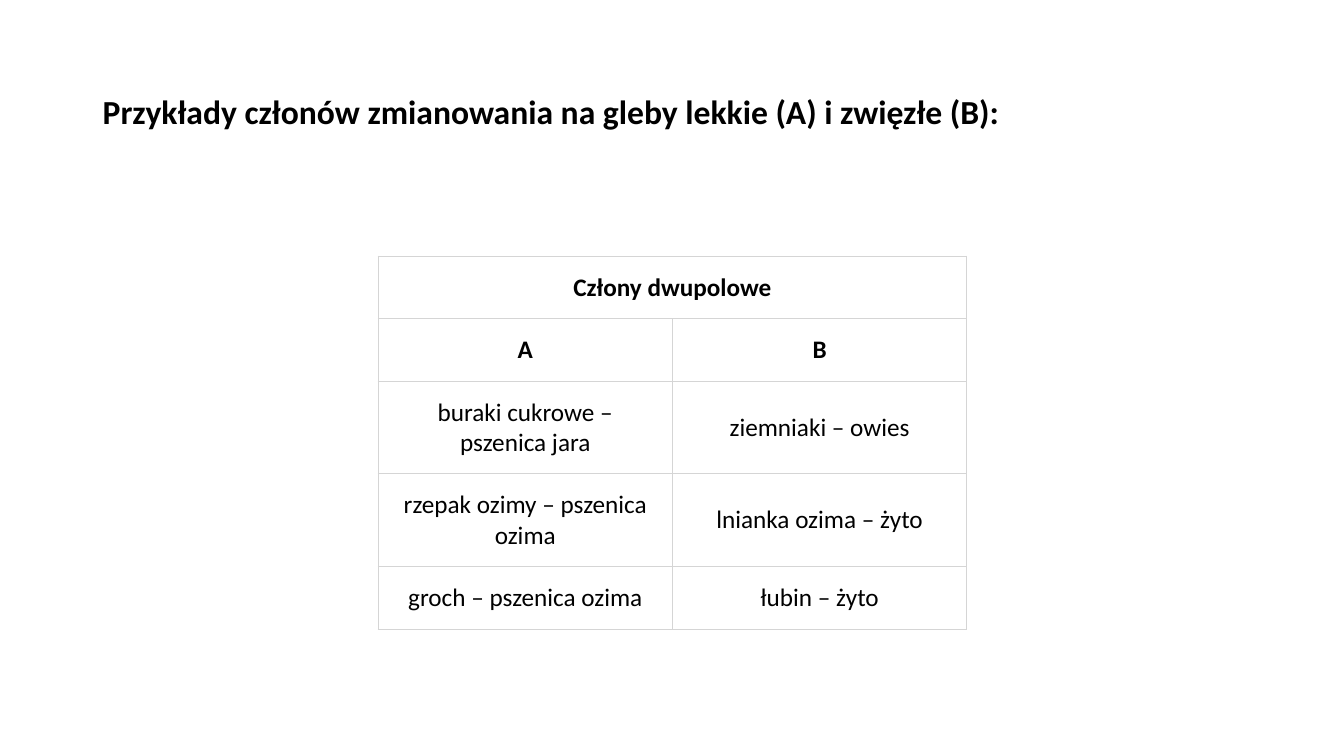
from dataclasses import dataclass

from lxml.etree import SubElement
from pptx import Presentation
from pptx.dml.color import RGBColor
from pptx.enum.text import MSO_ANCHOR, PP_ALIGN
from pptx.oxml.ns import qn
from pptx.slide import Slide
from pptx.table import _Cell
from pptx.text.text import _Paragraph
from pptx.util import Inches, Pt


@dataclass(frozen=True)
class Theme:
    font: str = "Calibri"
    ink: str = "000000"
    paper: str = "FFFFFF"
    rule: str = "D5D5D5"
    title: float = 24
    body: float = 18
    line: float = 0.75


@dataclass(frozen=True)
class Row:
    texts: tuple[str, ...]
    height: float = 0.61
    bold: bool = False


THEME = Theme()
TITLE = "Przykłady członów zmianowania na gleby lekkie (A) i zwięzłe (B):"
ROWS = (
    Row(("Człony dwupolowe",), bold=True),
    Row(("A", "B"), bold=True),
    Row(("buraki cukrowe – pszenica jara", "ziemniaki – owies"), 0.92),
    Row(("rzepak ozimy – pszenica ozima", "lnianka ozima – żyto"), 0.92),
    Row(("groch – pszenica ozima", "łubin – żyto")),
)
COLS = 2
WIDTH = 2.92
PAD = Inches(0.16)


def write(para: _Paragraph, text: str, size: float, bold: bool) -> None:
    para.text = text
    font = para.font
    font.name, font.size, font.bold = THEME.font, Pt(size), bold
    font.color.rgb = RGBColor.from_string(THEME.ink)


def frame(cell: _Cell) -> None:
    """Rule all four edges of a cell, then fill it."""
    props = cell._tc.get_or_add_tcPr()
    for side in "LRTB":
        edge = SubElement(props, qn(f"a:ln{side}"), w=str(Pt(THEME.line)))
        fill = SubElement(edge, qn("a:solidFill"))
        SubElement(fill, qn("a:srgbClr"), val=THEME.rule)
    cell.fill.solid()
    cell.fill.fore_color.rgb = RGBColor.from_string(THEME.paper)


def add_title(slide: Slide) -> None:
    box = slide.shapes.add_textbox(
        Inches(0.92), Inches(0.4), Inches(11.5), Inches(1.45)
    )
    text = box.text_frame
    text.word_wrap = True
    text.vertical_anchor = MSO_ANCHOR.MIDDLE
    para = text.paragraphs[0]
    para.line_spacing = 0.9
    write(para, TITLE, THEME.title, True)


def add_grid(slide: Slide) -> None:
    high = sum(row.height for row in ROWS)
    table = slide.shapes.add_table(
        len(ROWS), COLS, Inches(3.75), Inches(2.54),
        Inches(WIDTH * COLS), Inches(high),
    ).table
    table.first_row = table.horz_banding = False
    for col in table.columns:
        col.width = Inches(WIDTH)
    for i, row in enumerate(ROWS):
        table.rows[i].height = Inches(row.height)
        for cell in table.rows[i].cells:
            frame(cell)
        if len(row.texts) < COLS:
            table.cell(i, 0).merge(table.cell(i, COLS - 1))
        for j, text in enumerate(row.texts):
            cell = table.cell(i, j)
            cell.vertical_anchor = MSO_ANCHOR.MIDDLE
            cell.margin_left = cell.margin_right = PAD
            cell.margin_top = cell.margin_bottom = PAD
            para = cell.text_frame.paragraphs[0]
            para.alignment = PP_ALIGN.CENTER
            write(para, text, THEME.body, row.bold)


def main() -> None:
    deck = Presentation()
    deck.slide_width, deck.slide_height = Inches(13.33), Inches(7.5)
    slide = deck.slides.add_slide(deck.slide_layouts[6])
    add_title(slide)
    add_grid(slide)
    deck.save("out.pptx")


if __name__ == "__main__":
    main()
